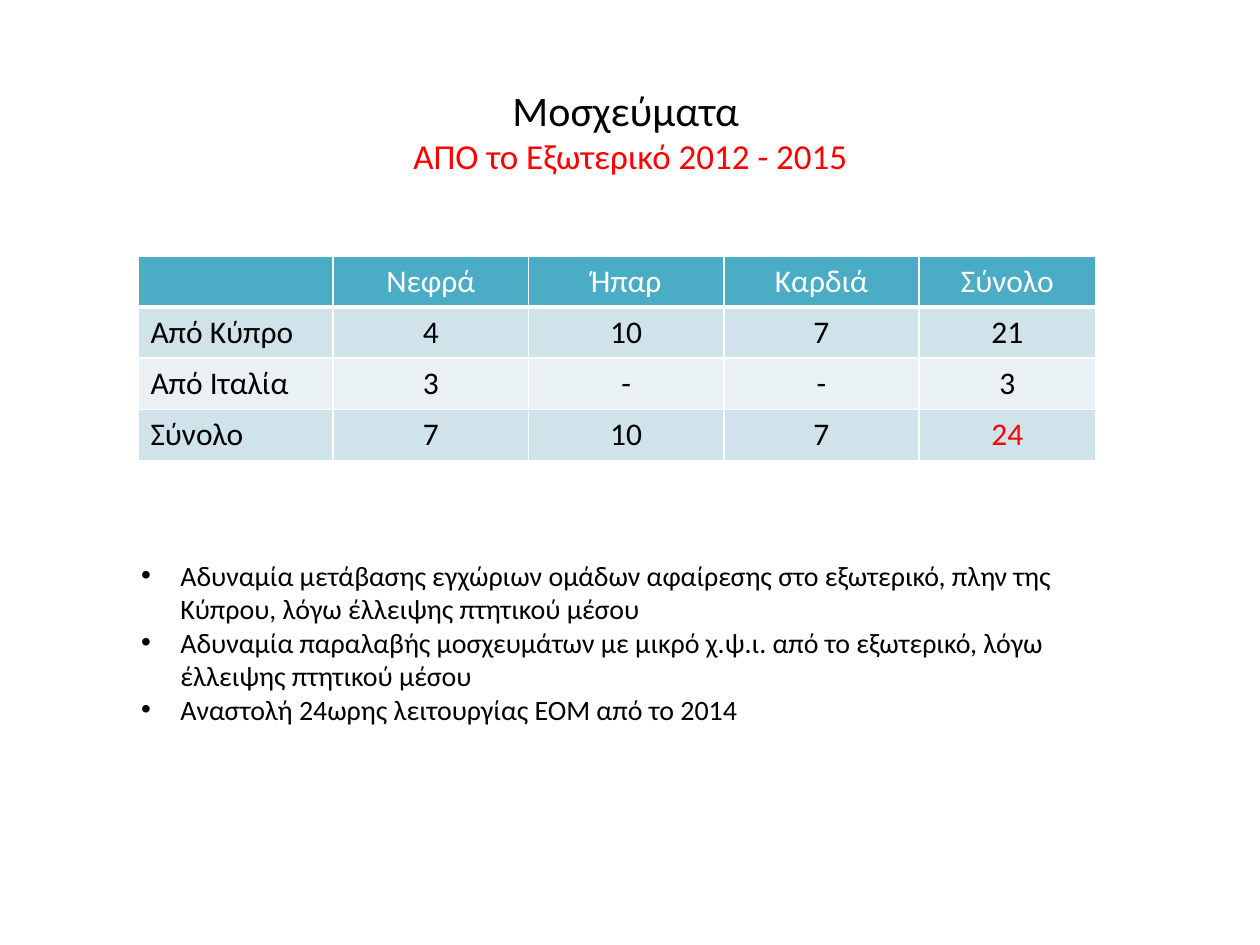
from lxml.etree import SubElement
from pptx import Presentation
from pptx.dml.color import RGBColor
from pptx.enum.text import MSO_ANCHOR, MSO_AUTO_SIZE, PP_ALIGN
from pptx.oxml.ns import qn
from pptx.util import Pt

FONT = "Calibri"
COLORS = {
    "text": "000000", "accent": "FF0000", "white": "FFFFFF",
    "header": "4BACC6", "band_dark": "D0E3EA", "band_light": "E9F1F5",
}
HEADING = "Μοσχεύματα "
SUBHEADING = "ΑΠΟ το Εξωτερικό 2012 - 2015"
GRAFTS = [
    ["", "Νεφρά", "Ήπαρ", "Καρδιά", "Σύνολο"],
    ["Από Κύπρο", "4", "10", "7", "21"],
    ["Από Ιταλία", "3", "-", "-", "3"],
    ["Σύνολο", "7", "10", "7", "24"],
]
COLUMN_WIDTHS = [111.6, 111.6, 111.6, 111.6, 100.8]
ROW_HEIGHT = 29.2
REASONS = [
    "Αδυναμία μετάβασης εγχώριων ομάδων αφαίρεσης στο εξωτερικό, πλην της "
    "Κύπρου, λόγω έλλειψης πτητικού μέσου",
    "Αδυναμία παραλαβής μοσχευμάτων με μικρό χ.ψ.ι. από το εξωτερικό, λόγω "
    "έλλειψης πτητικού μέσου",
    "Αναστολή 24ωρης λειτουργίας ΕΟΜ από το 2014",
]
INDENT = 22.5


def place(shape, left, top, width, height):
    shape.left, shape.top = Pt(left), Pt(top)
    shape.width, shape.height = Pt(width), Pt(height)


def add_run(paragraph, text, size, color="text"):
    run = paragraph.add_run()
    run.text = text
    run.font.name = FONT
    run.font.size = Pt(size)
    run.font.bold = False
    run.font.color.rgb = RGBColor.from_string(COLORS[color])


def add_borders(cell, bottom_width):
    """Draw white cell edges; call before the fill, which must follow them in the XML."""
    properties = cell._tc.get_or_add_tcPr()
    for side, width in (("L", 1), ("R", 1), ("T", 1), ("B", bottom_width)):
        line = SubElement(properties, qn(f"a:ln{side}"), w=str(Pt(width)))
        fill = SubElement(line, qn("a:solidFill"))
        SubElement(fill, qn("a:srgbClr"), val=COLORS["white"])


def add_title(slide):
    title = slide.shapes.title
    place(title, 16.5, 44.6, 687.6, 59.8)
    frame = title.text_frame
    frame.auto_size = MSO_AUTO_SIZE.NONE
    frame.vertical_anchor = MSO_ANCHOR.MIDDLE
    paragraph = frame.paragraphs[0]
    paragraph.alignment = PP_ALIGN.CENTER
    add_run(paragraph, HEADING, 24)
    paragraph.add_line_break()
    add_run(paragraph, SUBHEADING, 20, "accent")


def add_graft_table(slide):
    table = slide.shapes.add_table(
        len(GRAFTS), len(COLUMN_WIDTHS), Pt(78.8), Pt(146.3),
        Pt(sum(COLUMN_WIDTHS)), Pt(ROW_HEIGHT * len(GRAFTS))).table
    for column, width in zip(table.columns, COLUMN_WIDTHS):
        column.width = Pt(width)
    last = (len(GRAFTS) - 1, len(COLUMN_WIDTHS) - 1)
    for r, values in enumerate(GRAFTS):
        table.rows[r].height = Pt(ROW_HEIGHT)
        is_header = r == 0
        band = "header" if is_header else "band_dark" if r % 2 else "band_light"
        for c, value in enumerate(values):
            cell = table.cell(r, c)
            add_borders(cell, 3 if is_header else 1)
            cell.fill.solid()
            cell.fill.fore_color.rgb = RGBColor.from_string(COLORS[band])
            if not value:
                continue
            paragraph = cell.text_frame.paragraphs[0]
            paragraph.alignment = PP_ALIGN.CENTER if c else PP_ALIGN.LEFT
            color = "white" if is_header else "accent" if (r, c) == last else "text"
            add_run(paragraph, value, 18, color)


def add_reasons(slide):
    body = slide.placeholders[1]
    place(body, 73.4, 315.4, 589.7, 104.4)
    frame = body.text_frame
    frame.word_wrap = True
    frame.auto_size = MSO_AUTO_SIZE.SHAPE_TO_FIT_TEXT
    frame.vertical_anchor = MSO_ANCHOR.TOP
    for i, reason in enumerate(REASONS):
        paragraph = frame.add_paragraph() if i else frame.paragraphs[0]
        paragraph.space_before = Pt(0)
        properties = paragraph._p.get_or_add_pPr()
        properties.set("marL", str(Pt(INDENT)))
        properties.set("indent", str(Pt(-INDENT)))
        SubElement(properties, qn("a:buFont"), typeface="Arial")
        SubElement(properties, qn("a:buChar"), char="•")
        add_run(paragraph, reason, 16)


def main():
    presentation = Presentation()
    presentation.slide_width, presentation.slide_height = Pt(720), Pt(540)
    slide = presentation.slides.add_slide(presentation.slide_layouts[1])
    add_title(slide)
    add_graft_table(slide)
    add_reasons(slide)
    presentation.save("out.pptx")


if __name__ == "__main__":
    main()
